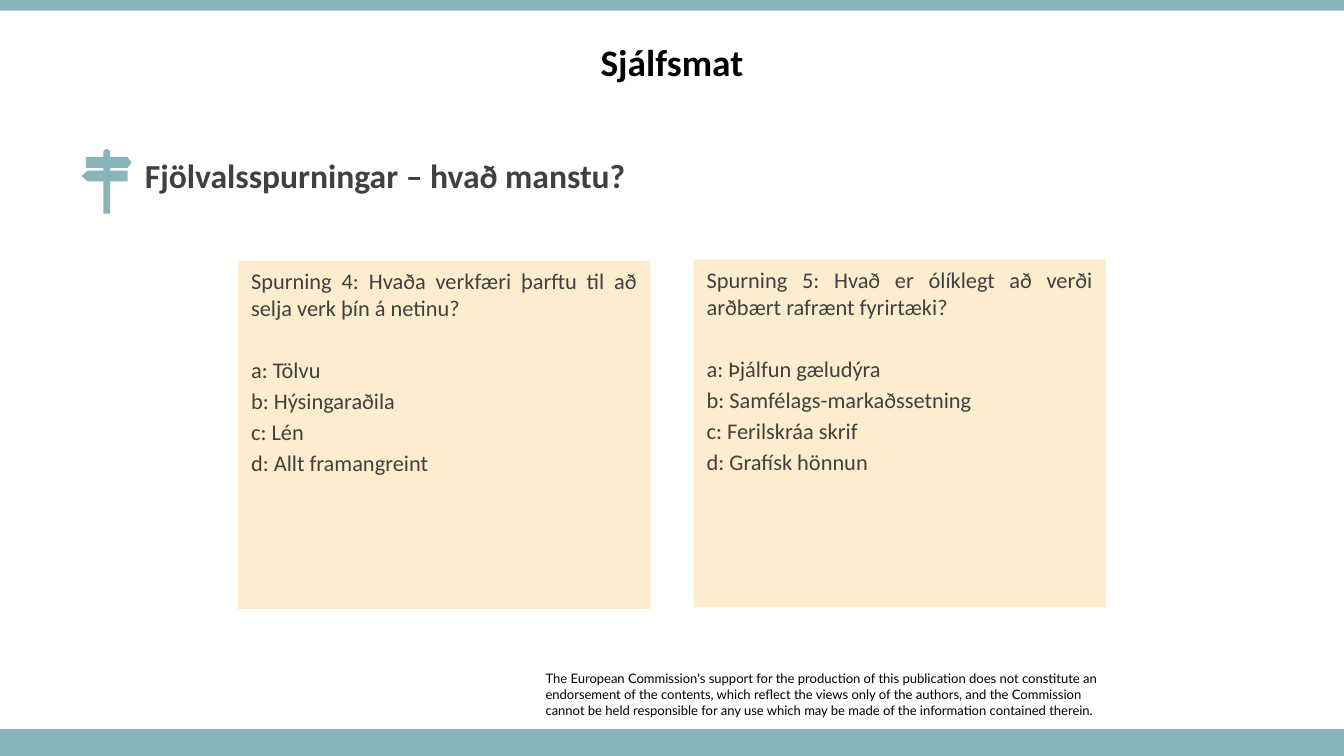
from math import cos, pi, sin
from typing import NamedTuple

from pptx import Presentation
from pptx.dml.color import RGBColor
from pptx.enum.shapes import MSO_SHAPE
from pptx.enum.text import MSO_ANCHOR, PP_ALIGN
from pptx.util import Inches, Pt

# The grid has 100 columns and 56.25 rows; each cell is a tenth of an inch.
CELL = 0.1
COLUMNS, ROWS = 100, 56.25
TEAL, CREAM, BLACK, GREY = "87B5BA", "FCEDCF", "000000", "404040"

CARD_WIDTH, CARD_HEIGHT = 30.7, 25.9
CARD_LEFT, CARD_STEP = 17.7, 33.9
OPTION_GAP, QUESTION_GAP = 2.2, 19


class Area(NamedTuple):
    left: float
    top: float
    width: float
    height: float


class Style(NamedTuple):
    size: float
    color: str
    font: str = "Calibri"
    bold: bool = False
    align: PP_ALIGN = PP_ALIGN.LEFT


class Quiz(NamedTuple):
    top: float
    question: str
    options: tuple[str, ...]


TITLE_STYLE = Style(20, BLACK, bold=True, align=PP_ALIGN.CENTER)
HEADING_STYLE = Style(18, GREY, bold=True)
QUIZ_STYLE = Style(12, GREY, align=PP_ALIGN.JUSTIFY)
DISCLAIMER_STYLE = Style(7, BLACK, font="Lato")

QUIZZES = (
    Quiz(
        19.4,
        "Spurning 4: Hvaða verkfæri þarftu til að selja verk þín á netinu?",
        ("a: Tölvu", "b: Hýsingaraðila", "c: Lén", "d: Allt framangreint"),
    ),
    Quiz(
        19.3,
        "Spurning 5: Hvað er ólíklegt að verði arðbært rafrænt fyrirtæki?",
        ("a: Þjálfun gæludýra", "b: Samfélags-markaðssetning",
         "c: Ferilskráa skrif", "d: Grafísk hönnun"),
    ),
)
DISCLAIMER = (
    "The European Commission's support for the production of this publication "
    "does not constitute an endorsement of the contents, which reflect the views "
    "only of the authors, and the Commission",
    "cannot be held responsible for any use which may be made of the information "
    "contained therein.",
)


def cells(count: float) -> int:
    return Inches(count * CELL)


def rgb(color: str) -> RGBColor:
    return RGBColor.from_string(color)


def paint(shape, color: str) -> None:
    shape.shadow.inherit = False
    shape.fill.solid()
    shape.fill.fore_color.rgb = rgb(color)
    shape.line.fill.background()


def add_block(slide, area: Area, color: str):
    block = slide.shapes.add_shape(MSO_SHAPE.RECTANGLE, *map(cells, area))
    paint(block, color)
    return block


def write(frame, lines: tuple[str, ...], style: Style,
          gaps: tuple[float, ...] = (), **frame_format) -> None:
    """Fill a frame with paragraphs; gaps are the spaces before each in points."""
    for name, value in {"word_wrap": True, **frame_format}.items():
        setattr(frame, name, value)
    for index, line in enumerate(lines):
        paragraph = frame.paragraphs[0] if index == 0 else frame.add_paragraph()
        paragraph.alignment = style.align
        paragraph.space_before = Pt(gaps[index] if gaps else 0)
        run = paragraph.add_run()
        run.text = line
        font_format = {"name": style.font, "size": Pt(style.size), "bold": style.bold}
        for name, value in font_format.items():
            setattr(run.font, name, value)
        run.font.color.rgb = rgb(style.color)


def add_title(slide, text: str) -> None:
    title = slide.shapes.title
    title.left, title.top, title.width, title.height = map(
        cells, Area(0, 1.4, COLUMNS, 6.3))
    write(title.text_frame, (text,), TITLE_STYLE, vertical_anchor=MSO_ANCHOR.MIDDLE)


def add_text(slide, area: Area, lines: tuple[str, ...], style: Style,
             **frame_format) -> None:
    box = slide.shapes.add_textbox(*map(cells, area))
    write(box.text_frame, lines, style, **frame_format)


def add_signpost(slide) -> None:
    middle, radius, cap_row, foot_row = 7.95, 0.25, 11.35, 15.9
    pole_left, pole_right = middle - radius, middle + radius
    cap = [(middle + radius * cos(pi * step / 12),
            cap_row - radius * sin(pi * step / 12)) for step in range(13)]
    left_side = [
        (pole_left, 11.7), (6.4, 11.7), (6.4, 12.5), (pole_left, 12.5),
        (pole_left, 12.7), (6.5, 12.7), (6.1, 13.1), (6.5, 13.5),
        (pole_left, 13.5), (pole_left, foot_row),
    ]
    right_side = [
        (pole_right, foot_row), (pole_right, 13.5), (9.5, 13.5), (9.5, 12.7),
        (pole_right, 12.7), (pole_right, 12.5), (9.5, 12.5), (9.8, 12.1),
        (9.5, 11.7), (pole_right, 11.7),
    ]
    outline = [(cells(x), cells(y)) for x, y in cap + left_side + right_side]
    builder = slide.shapes.build_freeform(*outline[0])
    builder.add_line_segments(outline[1:], close=True)
    paint(builder.convert_to_shape(), TEAL)


def add_quiz(slide, column: int, quiz: Quiz) -> None:
    area = Area(CARD_LEFT + column * CARD_STEP, quiz.top, CARD_WIDTH, CARD_HEIGHT)
    card = add_block(slide, area, CREAM)
    gaps = (0, QUESTION_GAP) + (OPTION_GAP,) * (len(quiz.options) - 1)
    write(card.text_frame, (quiz.question, *quiz.options), QUIZ_STYLE, gaps,
          vertical_anchor=MSO_ANCHOR.TOP)


def main() -> None:
    deck = Presentation()
    deck.slide_width, deck.slide_height = cells(COLUMNS), cells(ROWS)
    slide = deck.slides.add_slide(deck.slide_layouts[5])

    no_margins = {f"margin_{side}": 0 for side in ("left", "top", "right", "bottom")}
    add_text(slide, Area(40.6, 49.9, 41.7, 3.5), DISCLAIMER, DISCLAIMER_STYLE,
             **no_margins)
    add_block(slide, Area(0, 54.25, COLUMNS, 2), TEAL)
    add_block(slide, Area(0, 0, COLUMNS, 0.8), TEAL)
    add_title(slide, "Sjálfsmat")
    add_text(slide, Area(9.8, 11.5, 66.9, 3.1), ("Fjölvalsspurningar – hvað manstu?",),
             HEADING_STYLE, vertical_anchor=MSO_ANCHOR.MIDDLE)
    add_signpost(slide)
    for column, quiz in enumerate(QUIZZES):
        add_quiz(slide, column, quiz)

    deck.save("out.pptx")


if __name__ == "__main__":
    main()
